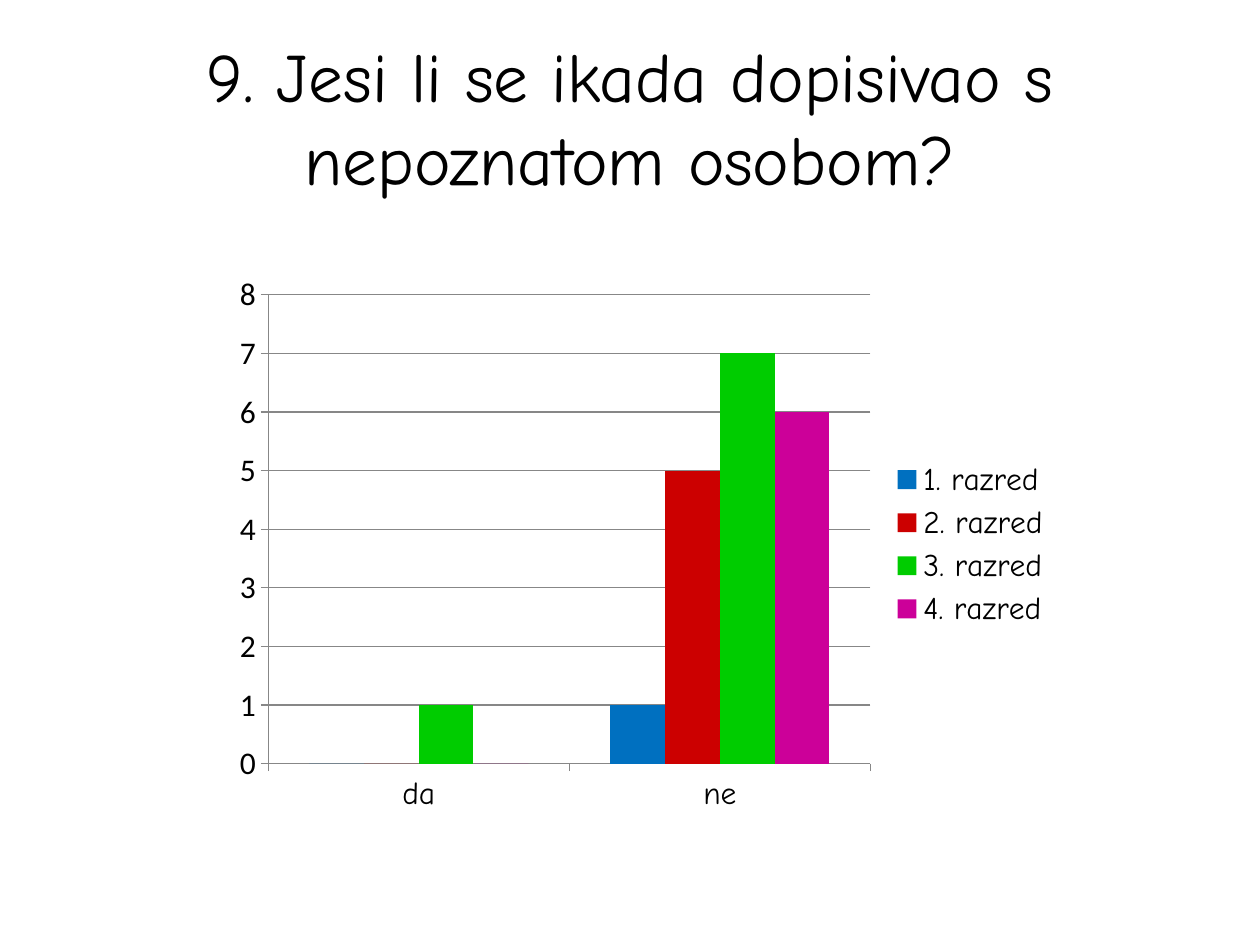
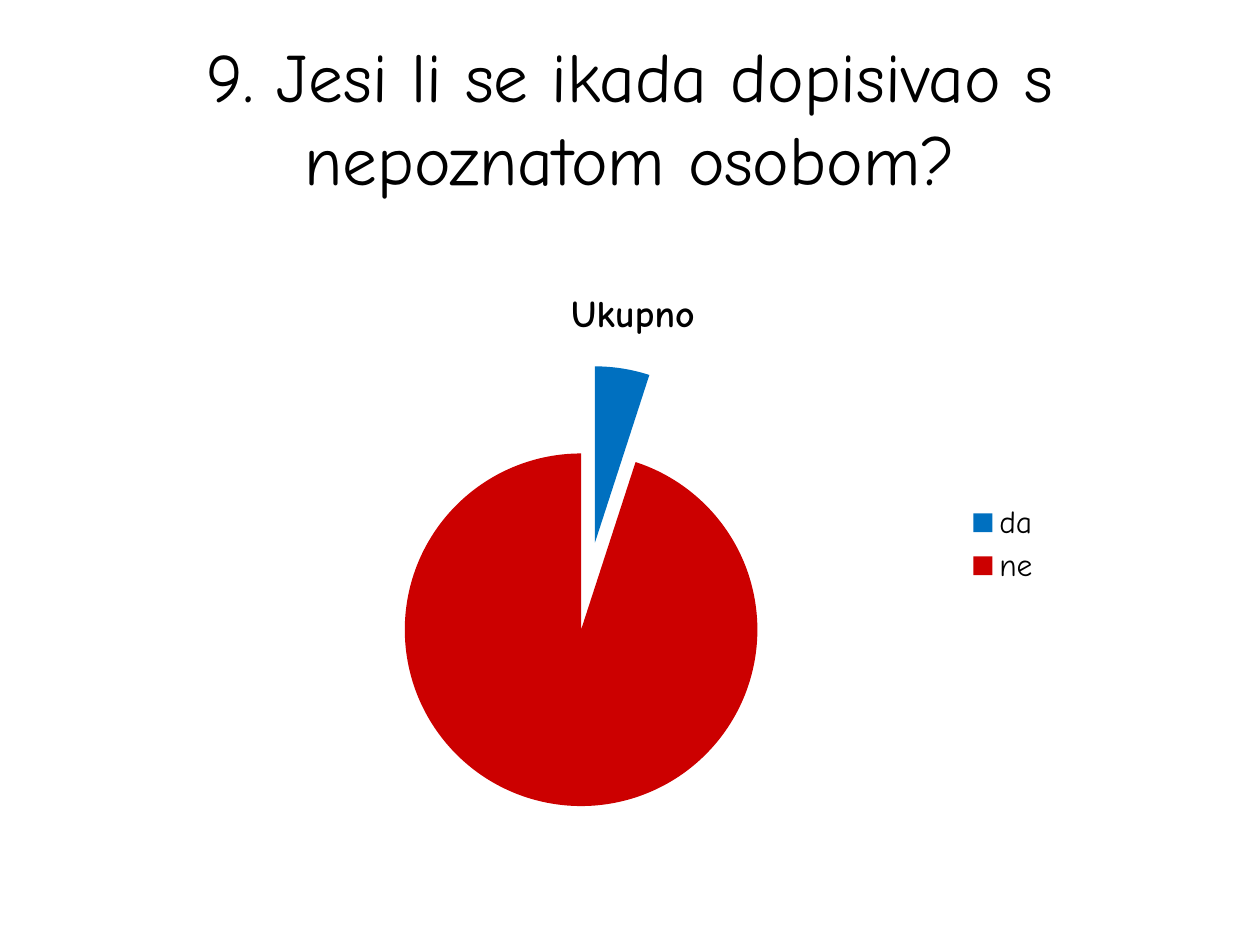
"""Build two survey slides: a column chart by class and a pie chart of the total."""
from lxml import etree
from pptx import Presentation
from pptx.chart.data import CategoryChartData
from pptx.dml.color import RGBColor
from pptx.enum.chart import XL_CHART_TYPE as ChartType, XL_LEGEND_POSITION as LegendPosition
from pptx.enum.chart import XL_TICK_MARK as TickMark
from pptx.enum.text import MSO_ANCHOR as Anchor, PP_ALIGN as Align
from pptx.oxml.ns import qn
from pptx.util import Inches, Pt

QUESTION = "9. Jesi li se ikada dopisivao s nepoznatom osobom?"
ANSWERS = ["da", "ne"]
BY_CLASS = [
    ("1. razred", (0, 1), "blue"),
    ("2. razred", (0, 5), "red"),
    ("3. razred", (1, 7), "green"),
    ("4. razred", (0, 6), "magenta"),
]
TOTAL = ("Ukupno", (5, 95), ["blue", "red"])
PIE_EXPLOSION = 25

COLORS = {
    "text": "000000",
    "line": "878787",
    "blue": "0070C0",
    "red": "CC0000",
    "green": "00CC00",
    "magenta": "CC0099",
}
TEXT_FONT, NUMBER_FONT = "Comic Neue", "Calibri"
TITLE_BOX = (0.5, 0.3, 9, 1.25)
CHART_TOP, CHART_WIDTH, CHART_HEIGHT = 2.1, 6.67, 4.44


def color(name):
    return RGBColor.from_string(COLORS[name])


def style_font(font, size, name=TEXT_FONT, bold=False):
    font.name, font.size, font.bold = name, Pt(size), bold
    font.color.rgb = color("text")


def paint(part, name):
    part.format.fill.solid()
    part.format.fill.fore_color.rgb = color(name)


def style_line(line):
    line.color.rgb = color("line")
    line.width = Pt(0.75)


def add_question_slide(presentation):
    slide = presentation.slides.add_slide(presentation.slide_layouts[6])
    text_frame = slide.shapes.add_textbox(*map(Inches, TITLE_BOX)).text_frame
    text_frame.word_wrap = True
    text_frame.vertical_anchor = Anchor.MIDDLE
    text_frame.text = QUESTION
    paragraph = text_frame.paragraphs[0]
    paragraph.alignment = Align.CENTER
    style_font(paragraph.runs[0].font, 39.6)
    return slide


def add_chart(slide, chart_type, left, series):
    chart_data = CategoryChartData()
    chart_data.categories = ANSWERS
    for name, values in series:
        chart_data.add_series(name, values)
    box = map(Inches, (left, CHART_TOP, CHART_WIDTH, CHART_HEIGHT))
    chart = slide.shapes.add_chart(chart_type, *box, chart_data).chart
    style_font(chart.font, 18, NUMBER_FONT)
    chart.has_title = False
    chart.has_legend = True
    chart.legend.position = LegendPosition.RIGHT
    chart.legend.include_in_layout = False
    style_font(chart.legend.font, 18)
    return chart


def add_class_columns(slide):
    series = [(name, values) for name, values, _ in BY_CLASS]
    chart = add_chart(slide, ChartType.COLUMN_CLUSTERED, 1.77, series)
    plot = chart.plots[0]
    plot.vary_by_categories = False
    plot.gap_width, plot.overlap = 150, 0
    for column, (_, _, name) in zip(plot.series, BY_CLASS):
        paint(column, name)
    for axis in (chart.category_axis, chart.value_axis):
        axis.major_tick_mark = TickMark.OUTSIDE
        axis.minor_tick_mark = TickMark.NONE
        style_line(axis.format.line)
    style_font(chart.category_axis.tick_labels.font, 18)
    value_axis = chart.value_axis
    value_axis.minimum_scale, value_axis.maximum_scale, value_axis.major_unit = 0, 8, 1
    value_axis.has_major_gridlines = True
    style_line(value_axis.major_gridlines.format.line)


def add_total_pie(slide):
    name, values, colors = TOTAL
    chart = add_chart(slide, ChartType.PIE, 1.69, [(name, values)])
    chart.has_title = True
    title_frame = chart.chart_title.text_frame
    title_frame.text = name
    style_font(title_frame.paragraphs[0].runs[0].font, 21.6, bold=True)
    chart.chart_title.include_in_layout = False
    pie = chart.plots[0].series[0]
    for index, slice_color in enumerate(colors):
        paint(pie.points[index], slice_color)
    explosion = etree.Element(qn("c:explosion"), val=str(PIE_EXPLOSION))
    pie.points[0].format
    pie._element.find(qn("c:dPt")).addprevious(explosion)


def main():
    presentation = Presentation()
    presentation.slide_width, presentation.slide_height = Inches(10), Inches(7.5)
    for add_content in (add_class_columns, add_total_pie):
        add_content(add_question_slide(presentation))
    presentation.save("out.pptx")


if __name__ == "__main__":
    main()
